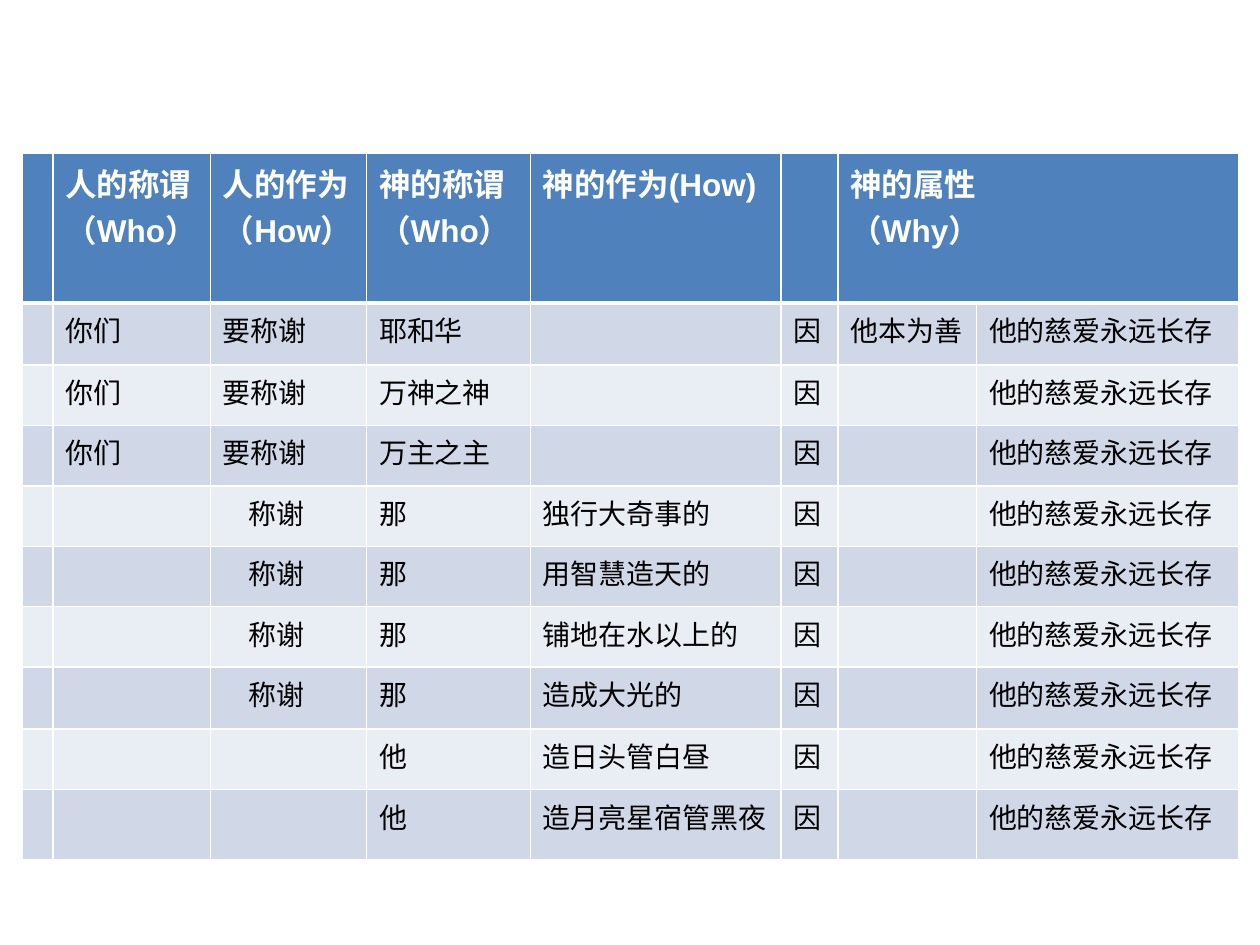
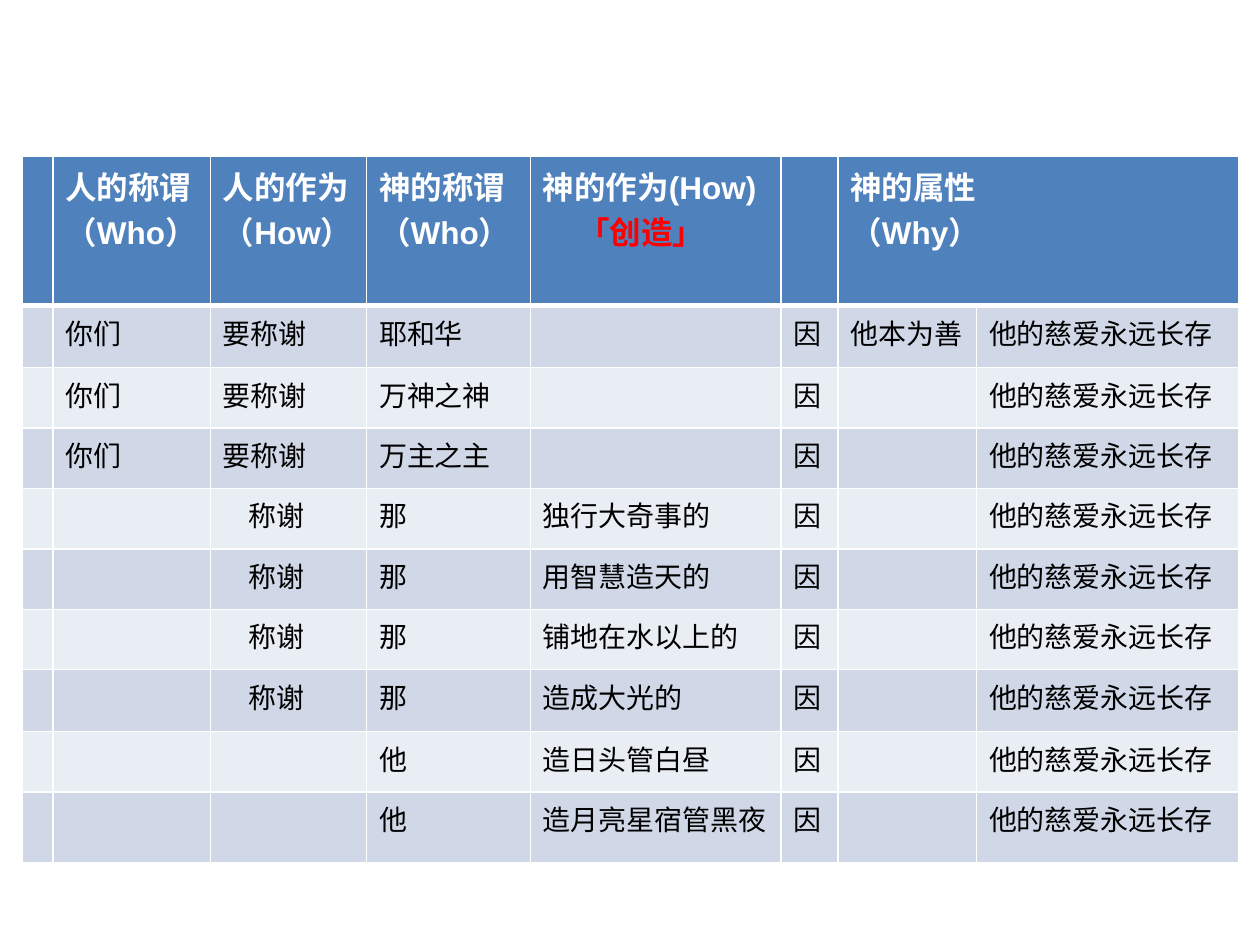
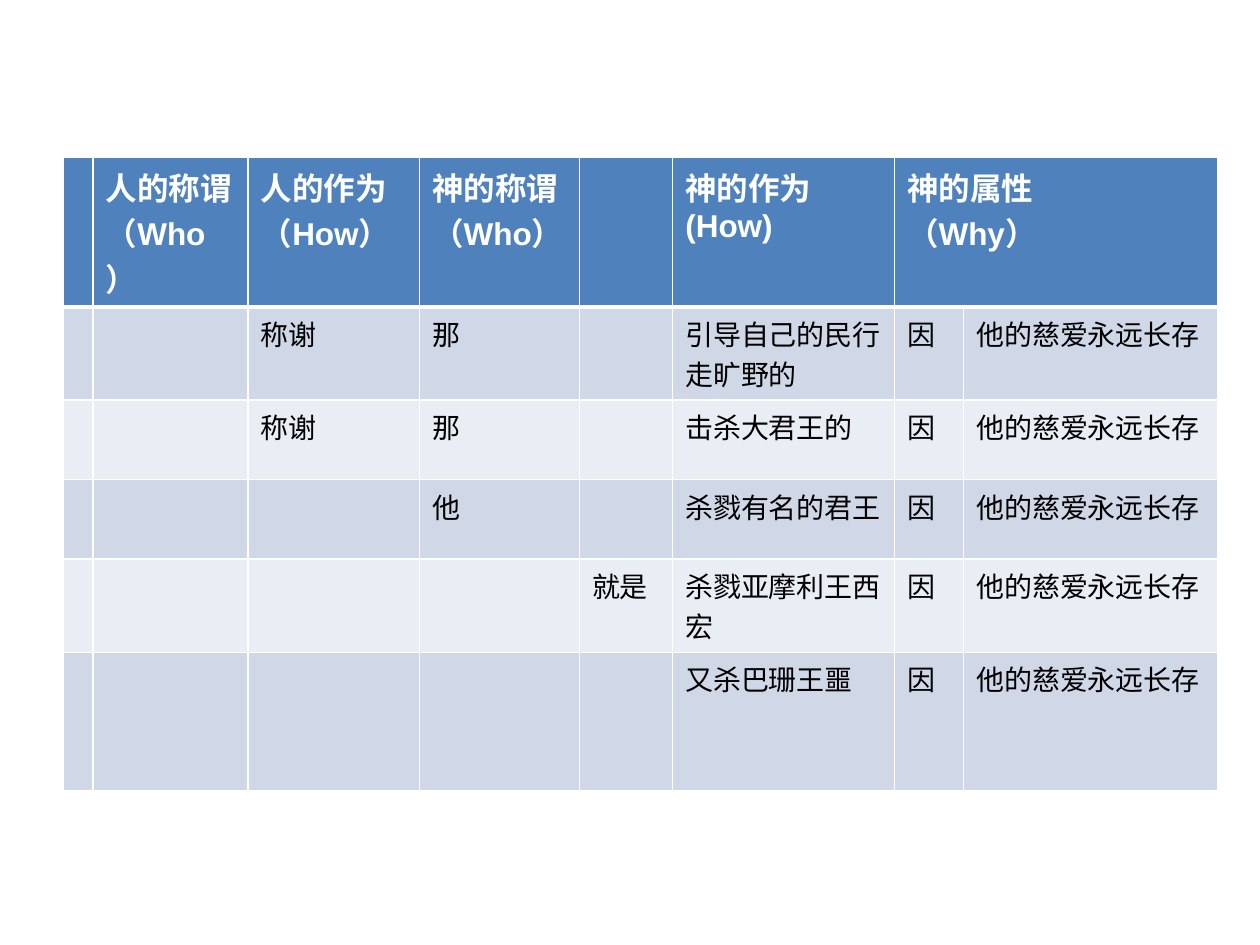
"""Build three slides that analyse a psalm of thanksgiving in tables."""

from dataclasses import dataclass

import lxml.etree
import pptx
import pptx.dml.color
import pptx.oxml.ns
import pptx.presentation
import pptx.table
import pptx.text.text
import pptx.util

Inches = pptx.util.Inches
WHITE, BLACK, RED = "FFFFFF", "000000", "FF0000"
HEADER_BLUE = "4F81BD"
BANDS = ("D0D8E8", "E9EDF4")
LATIN, CHINESE = "Arial", "Noto Sans CJK SC"
BECAUSE, MERCY = "因", "他的慈爱永远长存"


@dataclass(frozen=True)
class Line:
    text: str
    indent: float = 0
    color: str = ""


@dataclass(frozen=True)
class Style:
    size: float
    color: str
    bold: bool = False


Entry = tuple[Line, ...]
Row = list[Entry]


@dataclass(frozen=True)
class Analysis:
    left: float
    top: float
    columns: tuple[float, ...]
    heights: tuple[float, ...]
    header: Row
    verses: list[Row]


HEADER_STYLE = Style(18, WHITE, bold=True)
VERSE_STYLE = Style(16, BLACK)

HUMAN_WHO = (Line("人的称谓（Who）"),)
HUMAN_HOW = (Line("人的作为（How）"),)
GOD_WHO = (Line("神的称谓（Who）"),)
GOD_HOW = (Line("神的作为(How)"),)
GOD_WHY = (Line("神的属性"), Line("（Why）"))
CREATION = (Line("「创造」", indent=0.28, color=RED),)


def entries(*texts: str, indents: dict[int, float] | None = None) -> Row:
    """Turn plain texts into table entries, indenting the given columns."""
    shifts = indents or {}
    return [(Line(text, shifts.get(i, 0)),) if text else () for i, text in enumerate(texts)]


def creation_verses() -> list[Row]:
    """Return the verses that praise the Creator."""
    calls = [("耶和华", "他本为善"), ("万神之神", ""), ("万主之主", "")]
    thanks = ["独行大奇事的", "用智慧造天的", "铺地在水以上的", "造成大光的"]
    lights = ["造日头管白昼", "造月亮星宿管黑夜"]
    return (
        [entries("", "你们", "要称谢", name, "", BECAUSE, good, MERCY) for name, good in calls]
        + [entries("", "", "称谢", "那", deed, BECAUSE, "", MERCY, indents={2: 0.2}) for deed in thanks]
        + [entries("", "", "", "他", deed, BECAUSE, "", MERCY) for deed in lights]
    )


def deliverance_verses() -> list[Row]:
    """Return the verses that praise the Deliverer."""
    deeds = [
        ("称谢", "那", "", "引导自己的民行走旷野的"),
        ("称谢", "那", "", "击杀大君王的"),
        ("", "他", "", "杀戮有名的君王"),
        ("", "", "就是", "杀戮亚摩利王西宏"),
        ("", "", "", "又杀巴珊王噩"),
    ]
    return [entries("", "", *deed, BECAUSE, MERCY) for deed in deeds]


def creation_analysis(top: float, deed_heading: Entry) -> Analysis:
    """Return the creation table, with the given top and heading for deeds."""
    return Analysis(
        left=0.18,
        top=top,
        columns=(0.24, 1.25, 1.24, 1.3, 1.99, 0.45, 1.1, 2.08),
        heights=(0.94, 0.49, *[0.48] * 5, 0.49, 0.48, 0.56),
        header=[(), HUMAN_WHO, HUMAN_HOW, GOD_WHO, deed_heading, (), GOD_WHY, ()],
        verses=creation_verses(),
    )


def rgb(color: str) -> pptx.dml.color.RGBColor:
    """Convert a hex string to a colour."""
    return pptx.dml.color.RGBColor.from_string(color)


def write(frame: pptx.text.text.TextFrame, lines: Entry, style: Style) -> None:
    """Write each line as a paragraph with one styled run."""
    for i, line in enumerate(lines):
        paragraph = frame.add_paragraph() if i else frame.paragraphs[0]
        if line.indent:
            paragraph._p.get_or_add_pPr().set("marL", str(Inches(line.indent)))
        run = paragraph.add_run()
        run.text = line.text
        run.font.size = pptx.util.Pt(style.size)
        run.font.bold = style.bold
        run.font.name = LATIN
        run.font.color.rgb = rgb(line.color or style.color)
        east_asian = lxml.etree.SubElement(run._r.get_or_add_rPr(), pptx.oxml.ns.qn("a:ea"))
        east_asian.set("typeface", CHINESE)


def add_borders(cell: pptx.table._Cell, bottom: float) -> None:
    """Draw white borders round a cell, ahead of its fill."""
    properties = cell._tc.get_or_add_tcPr()
    for i, (side, width) in enumerate({"L": 1, "R": 1, "T": 1, "B": bottom}.items()):
        border = lxml.etree.Element(pptx.oxml.ns.qn(f"a:ln{side}"), w=str(pptx.util.Pt(width)))
        fill = lxml.etree.SubElement(border, pptx.oxml.ns.qn("a:solidFill"))
        lxml.etree.SubElement(fill, pptx.oxml.ns.qn("a:srgbClr"), val=WHITE)
        properties.insert(i, border)


def fill_row(table: pptx.table.Table, index: int, row: Row) -> None:
    """Fill, border and write one row of the table."""
    is_header = index == 0
    for column, lines in enumerate(row):
        cell = table.cell(index, column)
        cell.fill.solid()
        cell.fill.fore_color.rgb = rgb(HEADER_BLUE if is_header else BANDS[(index - 1) % 2])
        add_borders(cell, bottom=3 if is_header else 1)
        write(cell.text_frame, lines, HEADER_STYLE if is_header else VERSE_STYLE)


def add_analysis(deck: pptx.presentation.Presentation, analysis: Analysis) -> None:
    """Add a slide with its analysis table."""
    slide = deck.slides.add_slide(deck.slide_layouts.get_by_name("Blank"))
    rows = [analysis.header, *analysis.verses]
    table = slide.shapes.add_table(
        len(rows),
        len(analysis.columns),
        Inches(analysis.left),
        Inches(analysis.top),
        Inches(sum(analysis.columns)),
        Inches(sum(analysis.heights)),
    ).table
    for column, width in zip(table.columns, analysis.columns):
        column.width = Inches(width)
    for index, (row, height) in enumerate(zip(rows, analysis.heights)):
        table.rows[index].height = Inches(height)
        fill_row(table, index, row)
    last = len(analysis.columns) - 1
    table.cell(0, last - 1).merge(table.cell(0, last))


def main() -> None:
    """Build and save the presentation."""
    deck = pptx.Presentation()
    deck.slide_width, deck.slide_height = Inches(10), Inches(7.5)
    deliverance = Analysis(
        left=0.5,
        top=1.25,
        columns=(0.24, 1.23, 1.36, 1.27, 0.74, 1.76, 0.55, 2.02),
        heights=(1, 0.68, 0.63, 0.63, 0.63, 1.1),
        header=[(), HUMAN_WHO, HUMAN_HOW, GOD_WHO, (), GOD_HOW, GOD_WHY, ()],
        verses=deliverance_verses(),
    )
    for analysis in (
        creation_analysis(1.22, GOD_HOW),
        creation_analysis(1.24, GOD_HOW + CREATION),
        deliverance,
    ):
        add_analysis(deck, analysis)
    deck.save("out.pptx")


if __name__ == "__main__":
    main()
